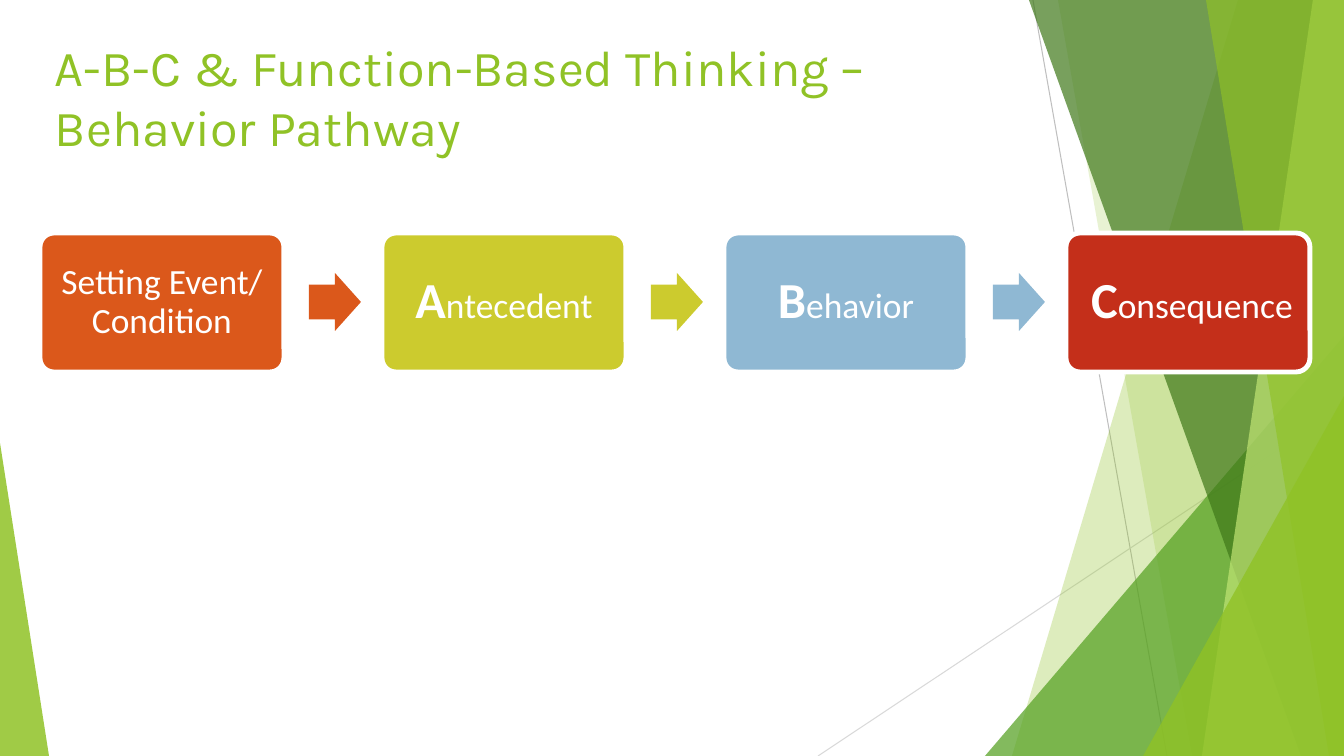
from lxml.etree import SubElement
from pptx import Presentation
from pptx.dml.color import RGBColor
from pptx.enum.shapes import MSO_CONNECTOR, MSO_SHAPE as SHAPE
from pptx.enum.text import MSO_ANCHOR, PP_ALIGN
from pptx.oxml.ns import qn
from pptx.util import Pt

PX = 9071.43  # EMU per px, 100.8 px to the inch
W, H = 1344, 756


def px(*lengths):
    return [round(n * PX) for n in lengths]


def paint(s, color, alpha=100):
    s.shadow.inherit = False
    s.fill.solid()
    s.fill.fore_color.rgb = RGBColor.from_string(color)
    s.line.fill.background()
    if alpha < 100:
        clr = s.fill._xPr.find(qn("a:solidFill"))[0]
        SubElement(clr, qn("a:alpha"), val=str(alpha * 1000))


prs = Presentation()
prs.slide_width, prs.slide_height = px(W, H)
shapes = prs.slides.add_slide(prs.slide_layouts[6]).shapes

# Thin background lines
for x1, y1, x2, y2, color in [(1033, 0, 1167, H, "BFBFBF"),
                              (W, 406, 818, H, "D9D9D9")]:
    line = shapes.add_connector(MSO_CONNECTOR.STRAIGHT, *px(x1, y1, x2, y2))
    line.line.color.rgb = RGBColor.from_string(color)
    line.line.width = Pt(0.75)
    SubElement(line._element.spPr, qn("a:effectLst"))

# Translucent facets: bands (top x, bottom x) reach the right edge,
# triangles (left, top, width, apex) reach the bottom edge
facets = [
    ("band", (1238, 1012), "90C226", 30),
    ("band", (1058, 1192), "90C226", 20),
    ("triangle", (985, 336, 359, 1), "54A021", 72),
    ("band", (1029, 1301), "3F7819", 70),
    ("band", (1313, 1202), "C0E474", 70),
    ("band", (1206, 1329), "90C226", 65),
    ("triangle", (1143, 396, 201, 1), "90C226", 80),
    ("triangle", (0, 443, 49, 0), "90C226", 85),
]
for kind, geometry, color, alpha in facets:
    if kind == "band":
        top_x, bottom_x = geometry
        fb = shapes.build_freeform(top_x, 0, scale=PX)
        fb.add_line_segments([(W, 0), (W, H), (bottom_x, H)], close=True)
        s = fb.convert_to_shape()
    else:
        x, y, w, apex = geometry
        s = shapes.add_shape(SHAPE.ISOSCELES_TRIANGLE, *px(x, y, w, H - y))
        s.adjustments[0] = apex
    paint(s, color, alpha)

# Behavior pathway: boxes joined by arrows
LEFT, PITCH = 40, 342
steps = [  # paragraphs of (bold initial, rest), colour, side insets
    ([("", "Setting Event/"), ("", "Condition")], "DB581B", (11, 11)),
    ([("A", "ntecedent")], "CCCB2E", (11, 11)),
    ([("B", "ehavior")], "8FB8D3", (11, 11)),
    ([("C", "onsequence")], "C42F1A", (8, 0)),
]
for i, (lines, color, insets) in enumerate(steps):
    x = LEFT + i * PITCH
    box = shapes.add_shape(SHAPE.ROUNDED_RECTANGLE, *px(x, 233, 244, 139))
    box.adjustments[0] = 0.1
    paint(box, color)
    box.line.color.rgb = RGBColor.from_string("FFFFFF")
    box.line.width = Pt(3.5)

    tf = box.text_frame
    tf.word_wrap = True
    tf.vertical_anchor = MSO_ANCHOR.MIDDLE
    tf.margin_left, tf.margin_right = px(*insets)
    for n, (initial, rest) in enumerate(lines):
        p = tf.add_paragraph() if n else tf.paragraphs[0]
        p.alignment = PP_ALIGN.CENTER
        p.line_spacing = 0.9
        p.font.name = "Calibri"
        p.font.size = Pt(25.3)
        p.font.color.rgb = RGBColor.from_string("FFFFFF")
        if initial:
            r = p.add_run()
            r.text = initial
            r.font.size = Pt(36)
            r.font.bold = True
        p.add_run().text = rest

    if i < len(steps) - 1:
        arrow = shapes.add_shape(SHAPE.RIGHT_ARROW, *px(x + 269, 273, 52, 58))
        arrow.adjustments[0] = 0.6
        arrow.adjustments[1] = 0.5
        paint(arrow, color)

# Title
title = shapes.add_textbox(*px(45, 31, 948, 145))
tf = title.text_frame
tf.word_wrap = True
p = tf.paragraphs[0]
p.text = "A-B-C & Function-Based Thinking – Behavior Pathway"
p.font.name = "Karla"
p.font.size = Pt(36)
p.font.color.rgb = RGBColor.from_string("90C226")

prs.save("out.pptx")
